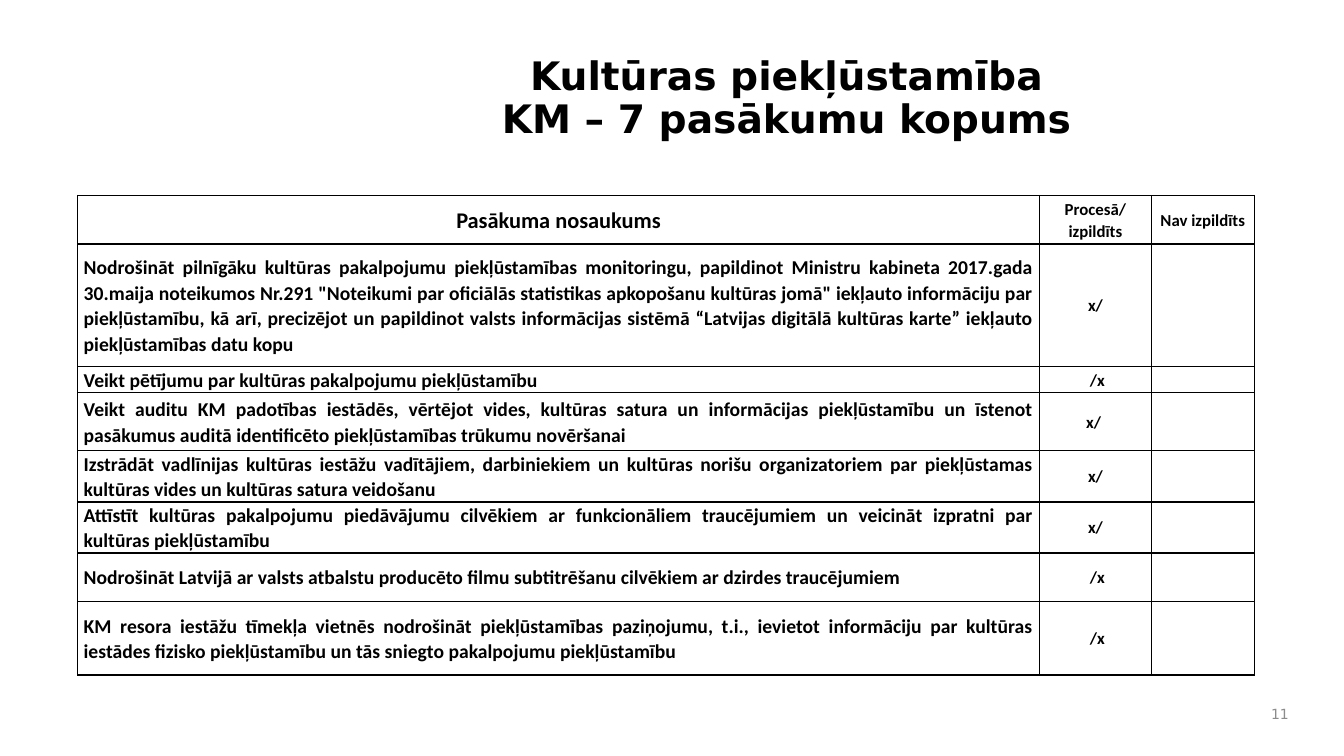
import pptx
import pptx.dml.color
import pptx.enum.text
import pptx.oxml.ns
import pptx.util
from lxml import etree
from pptx.util import Inches

ALIGN = pptx.enum.text.PP_ALIGN
MIDDLE = pptx.enum.text.MSO_ANCHOR.MIDDLE

HEADINGS = ["Pasākuma nosaukums", "Procesā/ izpildīts", "Nav izpildīts"]
MEASURES = [
    ("Nodrošināt pilnīgāku kultūras pakalpojumu piekļūstamības monitoringu, papildinot Ministru kabineta "
     "2017.gada 30.maija noteikumos Nr.291 \"Noteikumi par oficiālās statistikas apkopošanu kultūras jomā\" "
     "iekļauto informāciju par piekļūstamību, kā arī, precizējot un papildinot valsts informācijas sistēmā "
     "“Latvijas digitālā kultūras karte” iekļauto piekļūstamības datu kopu", "x/"),
    ("Veikt pētījumu par kultūras pakalpojumu piekļūstamību", " /x"),
    ("Veikt auditu KM padotības iestādēs, vērtējot vides, kultūras satura un informācijas piekļūstamību "
     "un īstenot pasākumus auditā identificēto piekļūstamības trūkumu novēršanai", "x/ "),
    ("Izstrādāt vadlīnijas kultūras iestāžu vadītājiem, darbiniekiem un kultūras norišu organizatoriem "
     "par piekļūstamas kultūras vides un kultūras satura veidošanu", "x/"),
    ("Attīstīt kultūras pakalpojumu piedāvājumu cilvēkiem ar funkcionāliem traucējumiem un veicināt "
     "izpratni par kultūras piekļūstamību", "x/"),
    ("Nodrošināt Latvijā ar valsts atbalstu producēto filmu subtitrēšanu cilvēkiem ar dzirdes "
     "traucējumiem", " /x"),
    ("KM resora iestāžu tīmekļa vietnēs nodrošināt piekļūstamības paziņojumu, t.i., ievietot informāciju "
     "par kultūras iestādes fizisko piekļūstamību un tās sniegto pakalpojumu piekļūstamību", " /x"),
]
COLUMN_WIDTHS = [9.54, 1.11, 1.02]
ROW_HEIGHTS = [0.48, 1.22, 0.24, 0.58, 0.48, 0.48, 0.48, 0.73]


def rgb(value):
    """Return the colour for a hex string."""
    return pptx.dml.color.RGBColor.from_string(value)


def style(paragraph, size, family, color, align, bold=False):
    """Set the font and alignment of a paragraph."""
    paragraph.alignment = align
    font = paragraph.font
    font.size, font.name, font.bold = pptx.util.Pt(size), family, bold
    font.color.rgb = rgb(color)


def add_border(cell, color="000000", width=1):
    """Draw a solid line on all four sides of a cell."""
    properties = cell._tc.get_or_add_tcPr()
    for side in ("a:lnL", "a:lnR", "a:lnT", "a:lnB"):
        line = etree.SubElement(properties, pptx.oxml.ns.qn(side), w=str(pptx.util.Pt(width)))
        fill = etree.SubElement(line, pptx.oxml.ns.qn("a:solidFill"))
        etree.SubElement(fill, pptx.oxml.ns.qn("a:srgbClr"), val=color)


def fill_cell(cell, text, size, align):
    """Write and format one cell of the measures table."""
    add_border(cell)
    cell.fill.background()
    cell.vertical_anchor = MIDDLE
    cell.margin_left = cell.margin_right = Inches(0.06)
    cell.margin_top = cell.margin_bottom = 0
    paragraph = cell.text_frame.paragraphs[0]
    paragraph.line_spacing = 1.07
    paragraph.space_after = pptx.util.Pt(4)
    if text:
        paragraph.add_run().text = text
    else:
        etree.SubElement(paragraph._p, pptx.oxml.ns.qn("a:endParaRPr"), sz=str(size * 100))
    style(paragraph, size, "Calibri", "000000", align, bold=True)


def place_title(slide, left, top, width, height):
    """Put the two-line heading in the title placeholder."""
    title = slide.shapes.title
    title.left, title.top, title.width, title.height = map(Inches, (left, top, width, height))
    frame = title.text_frame
    frame.auto_size = pptx.enum.text.MSO_AUTO_SIZE.NONE
    frame.vertical_anchor = MIDDLE
    heading = frame.paragraphs[0]
    heading.add_run().text = "Kultūras piekļūstamība"
    heading.add_line_break()
    heading.add_run().text = "KM – 7 pasākumu kopums"
    heading.line_spacing = 0.9
    style(heading, 28, "DejaVu Sans", "000000", ALIGN.CENTER, bold=True)


def place_measures(slide, left, top):
    """Build the table of measures and their status."""
    box = map(Inches, (left, top, sum(COLUMN_WIDTHS), sum(ROW_HEIGHTS)))
    measures = slide.shapes.add_table(len(ROW_HEIGHTS), len(COLUMN_WIDTHS), *box).table
    measures.first_row = measures.horz_banding = False
    for column, width in zip(measures.columns, COLUMN_WIDTHS):
        column.width = Inches(width)
    for row, height in zip(measures.rows, ROW_HEIGHTS):
        row.height = Inches(height)
    for column, heading in enumerate(HEADINGS):
        fill_cell(measures.cell(0, column), heading, 12 if column else 16, ALIGN.CENTER)
    for row, (measure, status) in enumerate(MEASURES, 1):
        fill_cell(measures.cell(row, 0), measure, 14, ALIGN.JUSTIFY)
        fill_cell(measures.cell(row, 1), status, 12, ALIGN.CENTER)
        fill_cell(measures.cell(row, 2), "", 12, ALIGN.CENTER)


def place_page_number(slide, left, top, width, height):
    """Write the page number at the right of its box."""
    frame = slide.shapes.add_textbox(*map(Inches, (left, top, width, height))).text_frame
    frame.word_wrap = True
    frame.vertical_anchor = MIDDLE
    frame.text = "11"
    style(frame.paragraphs[0], 10, "DejaVu Sans", "8C8C8C", ALIGN.RIGHT)


def main():
    """Build the slide and save it."""
    deck = pptx.Presentation()
    deck.slide_width, deck.slide_height = Inches(13.33), Inches(7.5)
    slide = deck.slides.add_slide(deck.slide_layouts[5])
    place_title(slide, 2.93, 0.42, 9.74, 1.13)
    place_measures(slide, 0.77, 1.94)
    place_page_number(slide, 12.44, 6.92, 0.44, 0.33)
    deck.save("out.pptx")


if __name__ == "__main__":
    main()
